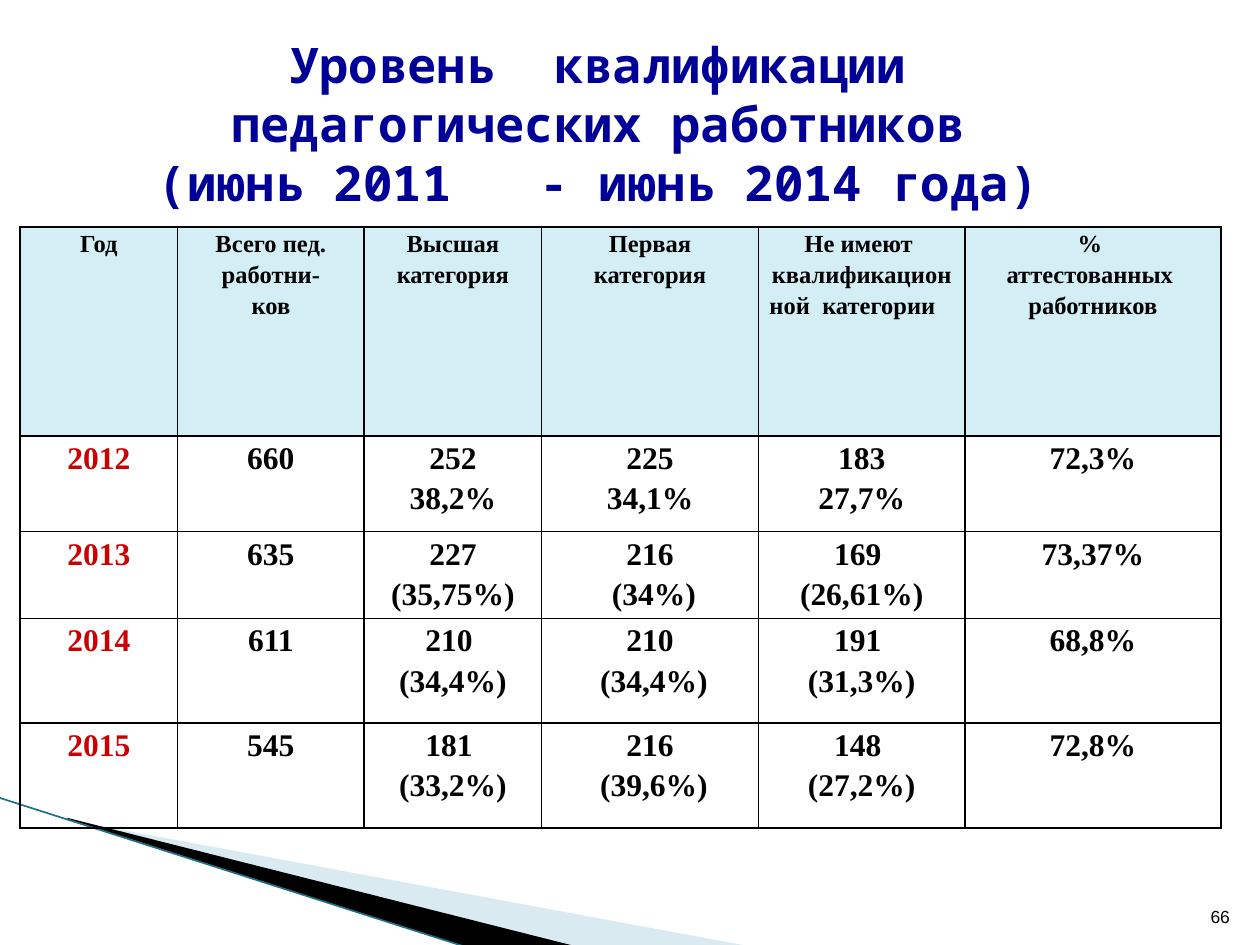
from pptx import Presentation
from pptx.dml.color import RGBColor
from pptx.enum.shapes import MSO_CONNECTOR
from pptx.enum.text import MSO_ANCHOR, PP_ALIGN
from pptx.oxml.ns import qn
from pptx.util import Inches, Pt
from lxml.etree import SubElement

COLORS = {
    "title": "000099", "text": "000000", "year": "CC0000", "header": "D3EEF5",
    "border": "000000", "pale": "A0CBDC", "dark": "000000", "edge": "1F6F85",
}


def add_run(paragraph, text, font_name, size, color, bold=False):
    run = paragraph.add_run()
    run.text = text
    run.font.name = font_name
    run.font.size = Pt(size)
    run.font.bold = bold
    run.font.color.rgb = RGBColor.from_string(COLORS[color])


def add_borders(cell):
    properties = cell._tc.get_or_add_tcPr()
    for side in ("a:lnL", "a:lnR", "a:lnT", "a:lnB"):
        border = SubElement(properties, qn(side), w=str(Pt(1)))
        fill = SubElement(border, qn("a:solidFill"))
        SubElement(fill, qn("a:srgbClr"), val=COLORS["border"])


presentation = Presentation()
presentation.slide_width, presentation.slide_height = Inches(10), Inches(7.5)
slide = presentation.slides.add_slide(presentation.slide_layouts[5])

# Corner wedges: each outline reaches beyond its frame
wedges = [
    ("pale", 40, (0.78, 5.47, 4.16, 1.58),
     [(0.55, 6.51), (5.95, 7.51), (4.56, 7.51), (0.55, 6.5)]),
    ("dark", 100, (-0.06, 6.33, 4.16, 0.92),
     [(0.53, 6.49), (4.57, 7.51), (3.72, 7.52), (0.54, 6.5)]),
]
for color, opacity, frame, points in wedges:
    corners = [(Inches(x), Inches(y)) for x, y in points]
    builder = slide.shapes.build_freeform(*corners[0])
    builder.add_line_segments(corners[1:], close=True)
    wedge = builder.convert_to_shape()
    wedge.shadow.inherit = False
    wedge.line.fill.background()
    wedge.fill.solid()
    wedge.fill.fore_color.rgb = RGBColor.from_string(COLORS[color])
    if opacity < 100:
        color_element = wedge._element.spPr.find(qn("a:solidFill"))[0]
        SubElement(color_element, qn("a:alpha"), val=str(opacity * 1000))
    left, top, width, height = [Inches(value) for value in frame]
    wedge.left, wedge.top, wedge.width, wedge.height = left, top, width, height
    outline = next(wedge._element.iter(qn("a:path")))
    outline.set("w", str(width))
    outline.set("h", str(height))
    for point, (x, y) in zip(outline.iter(qn("a:pt")), corners):
        point.set("x", str(x - left))
        point.set("y", str(y - top))

# Edge line along the wedges
edge = slide.shapes.add_connector(
    MSO_CONNECTOR.STRAIGHT, Inches(-0.01), Inches(6.33), Inches(3.71), Inches(7.52))
edge.line.color.rgb = RGBColor.from_string(COLORS["edge"])
edge.line.width = Pt(0.95)
SubElement(edge._element.spPr, qn("a:effectLst"))

# Title
title = slide.shapes.title
title.left, title.top = Inches(0.23), Inches(0)
title.width, title.height = Inches(9.27), Inches(1.95)
title.text_frame.vertical_anchor = MSO_ANCHOR.MIDDLE
paragraph = title.text_frame.paragraphs[0]
paragraph.alignment = PP_ALIGN.CENTER
title_lines = ["Уровень  квалификации ", "педагогических работников ",
               "(июнь 2011   - июнь 2014 года) "]
for index, line in enumerate(title_lines):
    if index:
        paragraph.add_line_break()
    add_run(paragraph, line, "Noto Sans Mono", 28, "title", bold=True)

# Slide number
number_box = slide.shapes.add_textbox(Inches(9.46), Inches(7.01), Inches(0.4), Inches(0.4))
number_box.text_frame.word_wrap = True
number_box.text_frame.vertical_anchor = MSO_ANCHOR.BOTTOM
paragraph = number_box.text_frame.paragraphs[0]
paragraph.alignment = PP_ALIGN.RIGHT
add_run(paragraph, "66", "Arial", 10, "text")

# Qualification table: a line break in a cell starts a new paragraph
rows = [
    ["Год", "Всего пед. работни-\nков", "Высшая категория", "Первая категория",
     "Не имеют  квалификационной  категории   ", "% \nаттестованных \nработников"],
    ["2012", "660", "252\n38,2%", "225\n34,1%", "183\n27,7%", "72,3%"],
    ["2013", "635", "227\n(35,75%)", "216\n (34%)", "169 \n(26,61%)", "73,37%"],
    ["2014", "611", "210 \n(34,4%)", "210\n (34,4%)", "191 \n(31,3%)", "68,8%"],
    ["2015", "545", "181 \n(33,2%)", "216\n (39,6%)", "148 \n(27,2%)", "72,8%"],
]
column_widths = [1.25, 1.48, 1.41, 1.72, 1.64, 2.03]
row_heights = [1.66, 0.76, 0.69, 0.83, 0.83]
table = slide.shapes.add_table(
    len(rows), len(column_widths), Inches(0.16), Inches(1.8),
    Inches(sum(column_widths)), Inches(sum(row_heights))).table
table.horz_banding = False
for column, width in zip(table.columns, column_widths):
    column.width = Inches(width)
for row, height in zip(table.rows, row_heights):
    row.height = Inches(height)

for row_index, row in enumerate(rows):
    is_header = row_index == 0
    for column_index, text in enumerate(row):
        cell = table.cell(row_index, column_index)
        cell.margin_left = cell.margin_right = Inches(0.07)
        cell.margin_top = cell.margin_bottom = Inches(0)
        add_borders(cell)
        if is_header:
            cell.fill.solid()
            cell.fill.fore_color.rgb = RGBColor.from_string(COLORS["header"])
        else:
            cell.fill.background()
        color = "year" if column_index == 0 and not is_header else "text"
        for index, line in enumerate(text.split("\n")):
            text_frame = cell.text_frame
            paragraph = text_frame.add_paragraph() if index else text_frame.paragraphs[0]
            paragraph.alignment = PP_ALIGN.CENTER
            paragraph.line_spacing = 1.15
            add_run(paragraph, line, "Times New Roman", 14 if is_header else 18, color, bold=True)

presentation.save("out.pptx")
